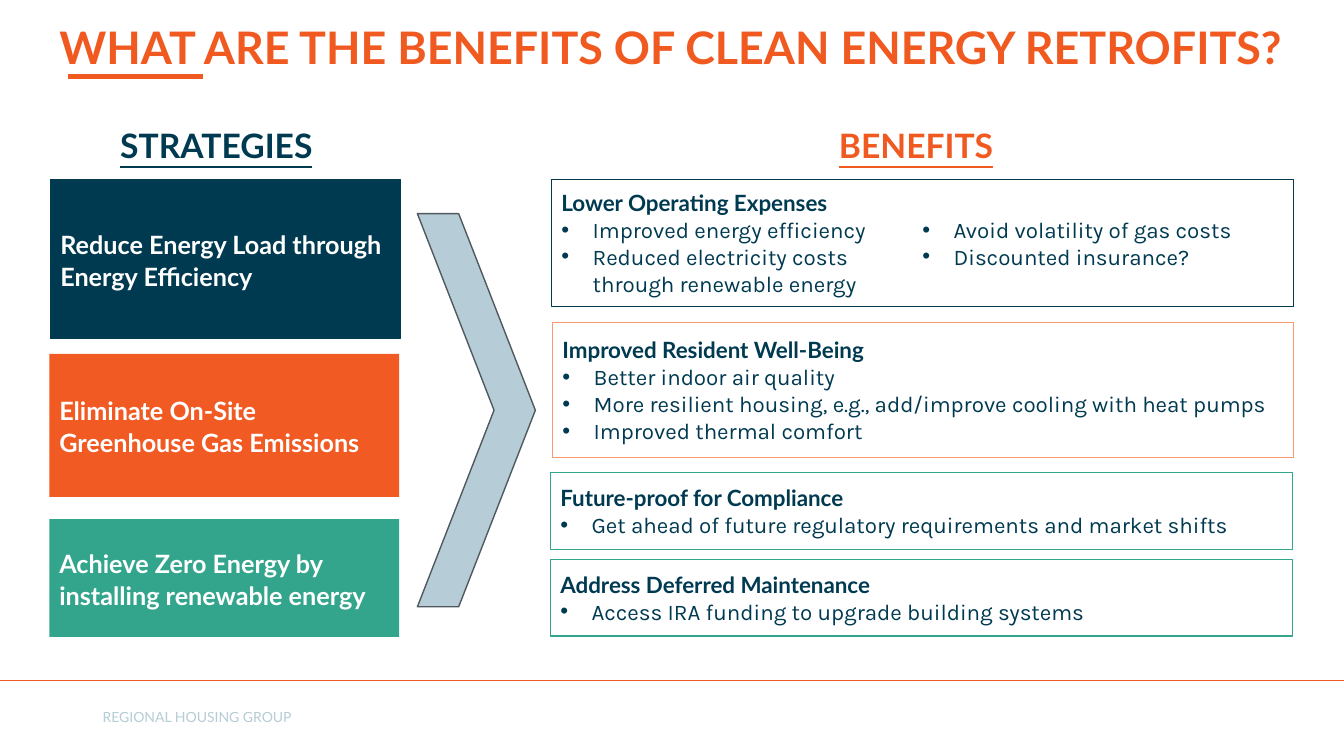
from dataclasses import dataclass

from lxml import etree
from pptx import Presentation
from pptx.dml.color import RGBColor
from pptx.enum.shapes import MSO_CONNECTOR, MSO_SHAPE
from pptx.enum.text import MSO_ANCHOR, PP_ALIGN
from pptx.oxml.ns import qn
from pptx.slide import Slide
from pptx.util import Pt

PX = 9144
RECTANGLE = MSO_SHAPE.RECTANGLE
CHEVRON = MSO_SHAPE.CHEVRON
STRAIGHT = MSO_CONNECTOR.STRAIGHT
TOP = MSO_ANCHOR.TOP
MIDDLE = MSO_ANCHOR.MIDDLE
LEFT = PP_ALIGN.LEFT
CENTER = PP_ALIGN.CENTER

NAVY = "003A51"
ORANGE = "F05A21"
GREEN = "34A58D"
MIST = "B6CCD6"
WHITE = "FFFFFF"
INDENT = 31
INSET = 10
COLUMN_WIDTH = 358


@dataclass(frozen=True)
class Format:
    size: int
    color: str
    font: str = "Lato"
    bold: bool = True
    underline: bool = False
    spacing: float = 1.0
    align: PP_ALIGN = LEFT
    bullet: bool = False


@dataclass(frozen=True)
class Area:
    left: int
    top: int
    width: int
    height: int

    def emu(self) -> list[int]:
        return [value * PX for value in (self.left, self.top, self.width, self.height)]


@dataclass(frozen=True)
class Label:
    area: Area
    text: str
    style: Format
    anchor: MSO_ANCHOR = MIDDLE


@dataclass(frozen=True)
class Strategy:
    area: Area
    text: str
    fill: str


@dataclass(frozen=True)
class Benefit:
    area: Area
    heading: str
    points: tuple[str, ...]
    line: str
    side_points: tuple[str, ...] = ()


@dataclass(frozen=True)
class Rule:
    left: int
    right: int
    top: int
    color: str
    weight: float


STRATEGY_STYLE = Format(18, WHITE, spacing=1.07)
HEADING_STYLE = Format(16, NAVY)
POINT_STYLE = Format(16, NAVY, "Karla", bold=False, bullet=True)

LABELS = [
    Label(Area(49, -23, 1318, 145), "WHAT ARE THE BENEFITS OF CLEAN ENERGY RETROFITS?",
          Format(32, ORANGE, spacing=0.9)),
    Label(Area(-25, 119, 479, 50), "STRATEGIES",
          Format(24, NAVY, underline=True, align=CENTER), TOP),
    Label(Area(669, 119, 479, 50), "BENEFITS",
          Format(24, ORANGE, underline=True, align=CENTER), TOP),
    Label(Area(92, 695, 450, 33), "REGIONAL HOUSING GROUP", Format(10, MIST, bold=False)),
]
STRATEGIES = [
    Strategy(Area(50, 178, 347, 158), "Reduce Energy Load through Energy Efficiency", NAVY),
    Strategy(Area(49, 351, 347, 142), "Eliminate On-Site Greenhouse Gas Emissions", "F15A22"),
    Strategy(Area(49, 515, 347, 117), "Achieve Zero Energy by installing renewable energy", GREEN),
]
BENEFITS = [
    Benefit(Area(547, 178, 736, 126), "Lower Operating Expenses",
            ("Improved energy efficiency", "Reduced electricity costs through renewable energy"),
            NAVY, ("Avoid volatility of gas costs", "Discounted insurance?")),
    Benefit(Area(548, 320, 735, 134), "Improved Resident Well-Being",
            ("Better indoor air quality",
             "More resilient housing, e.g., add/improve cooling with heat pumps",
             "Improved thermal comfort"), "F7996C"),
    Benefit(Area(546, 469, 736, 76), "Future-proof for Compliance",
            ("Get ahead of future regulatory requirements and market shifts",), GREEN),
    Benefit(Area(546, 555, 736, 76), "Address Deferred Maintenance",
            ("Access IRA funding to upgrade building systems",), GREEN),
]
RULES = [
    Rule(0, 1333, 675, "F15922", 0.5),
    Rule(67, 201, 76, ORANGE, 3),
]


def rgb(value: str) -> RGBColor:
    return RGBColor.from_string(value)


def write(box, lines: list[tuple[str, Format]], anchor: MSO_ANCHOR = MIDDLE,
          right_inset: int = INSET) -> None:
    frame = box.text_frame
    frame.word_wrap = True
    frame.vertical_anchor = anchor
    frame.margin_right = right_inset * PX
    for index, (text, style) in enumerate(lines):
        para = frame.add_paragraph() if index else frame.paragraphs[0]
        para.alignment = style.align
        para.line_spacing = style.spacing
        if style.bullet:
            properties = para._p.get_or_add_pPr()
            properties.set("marL", str(INDENT * PX))
            properties.set("indent", str(-INDENT * PX))
            etree.SubElement(properties, qn("a:buFont")).set("typeface", "Arial")
            etree.SubElement(properties, qn("a:buChar")).set("char", "•")
        span = para.add_run()
        span.text = text
        values = {"name": style.font, "size": Pt(style.size),
                  "bold": style.bold, "underline": style.underline}
        for name, value in values.items():
            setattr(span.font, name, value)
        span.font.color.rgb = rgb(style.color)


def add_box(page: Slide, area: Area, fill: str, line: str = "", kind: MSO_SHAPE = RECTANGLE):
    box = page.shapes.add_shape(kind, *area.emu())
    box.shadow.inherit = False
    box.fill.solid()
    box.fill.fore_color.rgb = rgb(fill)
    if line:
        box.line.color.rgb = rgb(line)
        box.line.width = Pt(1)
    else:
        box.line.fill.background()
    return box


def add_label(page: Slide, label: Label) -> None:
    box = page.shapes.add_textbox(*label.area.emu())
    write(box, [(label.text, label.style)], label.anchor)


def add_strategy(page: Slide, strategy: Strategy) -> None:
    line = NAVY if strategy.fill == NAVY else ""
    box = add_box(page, strategy.area, strategy.fill, line)
    write(box, [(strategy.text, STRATEGY_STYLE)])


def add_benefit(page: Slide, benefit: Benefit) -> None:
    area = benefit.area
    box = add_box(page, area, WHITE, benefit.line)
    points = [(point, POINT_STYLE) for point in benefit.points]
    right_inset = INSET + COLUMN_WIDTH if benefit.side_points else INSET
    write(box, [(benefit.heading, HEADING_STYLE), *points], right_inset=right_inset)
    if benefit.side_points:
        column = Area(area.left + COLUMN_WIDTH, area.top, area.width - COLUMN_WIDTH, area.height)
        side = page.shapes.add_textbox(*column.emu())
        write(side, [(point, POINT_STYLE) for point in benefit.side_points])


def add_rule(page: Slide, rule: Rule) -> None:
    ends = [value * PX for value in (rule.left, rule.top, rule.right, rule.top)]
    connector = page.shapes.add_connector(STRAIGHT, *ends)
    connector.line.color.rgb = rgb(rule.color)
    connector.line.width = Pt(rule.weight)
    etree.SubElement(connector._element.spPr, qn("a:effectLst"))


def main() -> None:
    deck = Presentation()
    deck.slide_width, deck.slide_height = 1333 * PX, 750 * PX
    page = deck.slides.add_slide(deck.slide_layouts[6])
    for rule in RULES:
        add_rule(page, rule)
    for label in LABELS:
        add_label(page, label)
    for strategy in STRATEGIES:
        add_strategy(page, strategy)
    chevron = add_box(page, Area(414, 212, 117, 390), MIST, "50595E", CHEVRON)
    chevron.adjustments[0] = 0.65
    for benefit in BENEFITS:
        add_benefit(page, benefit)
    deck.save("out.pptx")


if __name__ == "__main__":
    main()
